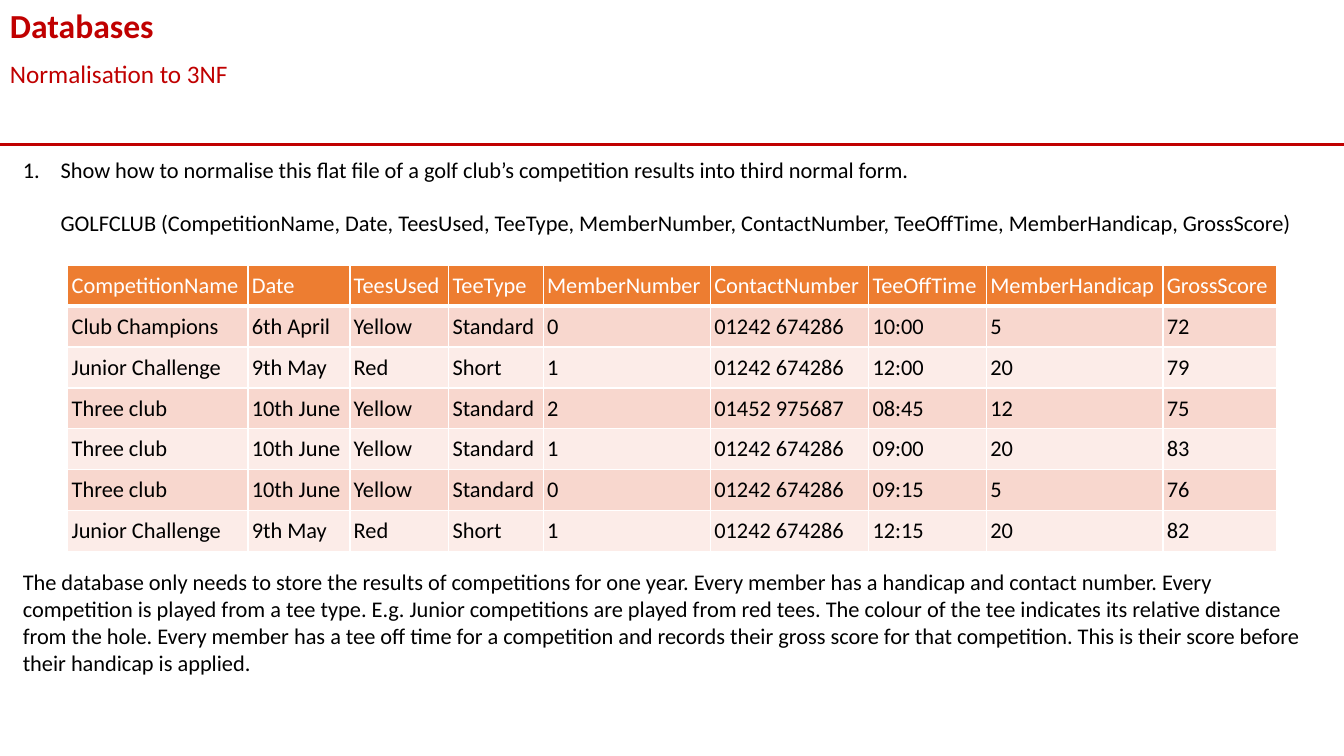
from lxml import etree
from pptx import Presentation
from pptx import util as u
from pptx.dml.color import RGBColor
from pptx.enum import shapes, text
from pptx.oxml.ns import qn

RED = RGBColor(0xC0, 0x00, 0x00)
BLACK = RGBColor(0x00, 0x00, 0x00)
WHITE = RGBColor(0xFF, 0xFF, 0xFF)
ORANGE = RGBColor(0xED, 0x7D, 0x31)
PEACH = RGBColor(0xF8, 0xD7, 0xCE)
PALE = RGBColor(0xFC, 0xEC, 0xE8)

WIDTH, HEIGHT = 960, 540
MARGIN, BODY = 9.2, 941
INDENT = 27

TASK = ("Show how to normalise this flat file of a golf club’s competition "
        "results into third normal form.")
NOTE = ("The database only needs to store the results of competitions for one year. "
        "Every member has a handicap and contact number. Every competition is played "
        "from a tee type. E.g. Junior competitions are played from red tees. The colour "
        "of the tee indicates its relative distance from the hole. Every member has a "
        "tee off time for a competition and records their gross score for that "
        "competition. This is their score before their handicap is applied.")

FIELDS = {
    "CompetitionName": 128.7, "Date": 72.8, "TeesUsed": 70.6,
    "TeeType": 67.6, "MemberNumber": 119.4, "ContactNumber": 113,
    "TeeOffTime": 84.2, "MemberHandicap": 126, "GrossScore": 81,
}
SCORES = [
    ("Club Champions", "6th April", "Yellow", "Standard", "0", "01242 674286", "10:00", "5", "72"),
    ("Junior Challenge", "9th May", "Red", "Short", "1", "01242 674286", "12:00", "20", "79"),
    ("Three club", "10th June", "Yellow", "Standard", "2", "01452 975687", "08:45", "12", "75"),
    ("Three club", "10th June", "Yellow", "Standard", "1", "01242 674286", "09:00", "20", "83"),
    ("Three club", "10th June", "Yellow", "Standard", "0", "01242 674286", "09:15", "5", "76"),
    ("Junior Challenge", "9th May", "Red", "Short", "1", "01242 674286", "12:15", "20", "82"),
]


class Page:
    font = "Calibri"
    size = 16

    def __init__(self, deck):
        self.slide = deck.slides.add_slide(deck.slide_layouts[6])

    def run(self, para, words, color=BLACK, size=None, bold=False):
        run = para.add_run()
        run.text = words
        run.font.name = self.font
        run.font.size = u.Pt(size or self.size)
        run.font.bold = bold
        run.font.color.rgb = color

    def box(self, left, top, width, height):
        box = self.slide.shapes.add_textbox(*map(u.Pt, (left, top, width, height)))
        frame = box.text_frame
        frame.word_wrap = True
        frame.auto_size = text.MSO_AUTO_SIZE.SHAPE_TO_FIT_TEXT
        return frame

    def indent(self, para, left, first=0, number=False):
        props = para._p.get_or_add_pPr()
        props.set("marL", str(u.Pt(left)))
        props.set("indent", str(u.Pt(first)))
        if number:
            etree.SubElement(props, qn("a:buAutoNum"), type="arabicPeriod")

    def rule(self, top):
        line = self.slide.shapes.add_connector(
            shapes.MSO_CONNECTOR.STRAIGHT, 0, u.Pt(top), u.Pt(WIDTH), u.Pt(top))
        line.line.color.rgb = RED
        line.line.width = u.Pt(2.25)
        etree.SubElement(line._element.spPr, qn("a:effectLst"))

    def border(self, cell, base):
        """Draw white cell edges, the bottom one base points wide."""
        props = cell._tc.get_or_add_tcPr()
        for side, width in zip("LRTB", (1, 1, 1, base)):
            edge = etree.SubElement(props, qn("a:ln" + side), w=str(u.Pt(width)))
            fill = etree.SubElement(edge, qn("a:solidFill"))
            etree.SubElement(fill, qn("a:srgbClr"), val=str(WHITE))

    def cell(self, cell, words, fill, color, base):
        self.border(cell, base)
        cell.fill.solid()
        cell.fill.fore_color.rgb = fill
        cell.vertical_anchor = text.MSO_ANCHOR.MIDDLE
        cell.margin_left = cell.margin_right = u.Pt(2.7)
        cell.margin_top = cell.margin_bottom = u.Pt(2.7)
        self.run(cell.text_frame.paragraphs[0], words, color)

    def table(self, left, top, step, fields, rows):
        count = len(rows) + 1
        grid = self.slide.shapes.add_table(
            count, len(fields), u.Pt(left), u.Pt(top),
            u.Pt(sum(fields.values())), u.Pt(step * count)).table
        for col, width in zip(grid.columns, fields.values()):
            col.width = u.Pt(width)
        for r, row in enumerate([tuple(fields), *rows]):
            grid.rows[r].height = u.Pt(step)
            if r == 0:
                look = ORANGE, WHITE, 3
            else:
                look = (PEACH if r % 2 else PALE), BLACK, 1
            for c, words in enumerate(row):
                self.cell(grid.cell(r, c), words, *look)


def main():
    deck = Presentation()
    deck.slide_width, deck.slide_height = u.Pt(WIDTH), u.Pt(HEIGHT)
    page = Page(deck)

    page.rule(103.5)
    topic = page.box(0, 38, WIDTH, 29)
    page.run(topic.paragraphs[0], "Normalisation to 3NF", RED, 18)
    title = page.box(0, 0, WIDTH, 36)
    page.run(title.paragraphs[0], "Databases", RED, 24, True)

    task = page.box(MARGIN, 108, BODY, 65.5)
    first = task.paragraphs[0]
    page.indent(first, INDENT, -INDENT, True)
    page.run(first, TASK)
    schema = task.add_paragraph()
    page.indent(schema, INDENT)
    schema.space_before = u.Pt(19)
    page.run(schema, f"GOLFCLUB ({', '.join(FIELDS)})")

    page.table(48.5, 189.5, 29.2, FIELDS, SCORES)

    note = page.box(MARGIN, 402.5, BODY, 85)
    page.run(note.paragraphs[0], NOTE)
    deck.save("out.pptx")


if __name__ == "__main__":
    main()
